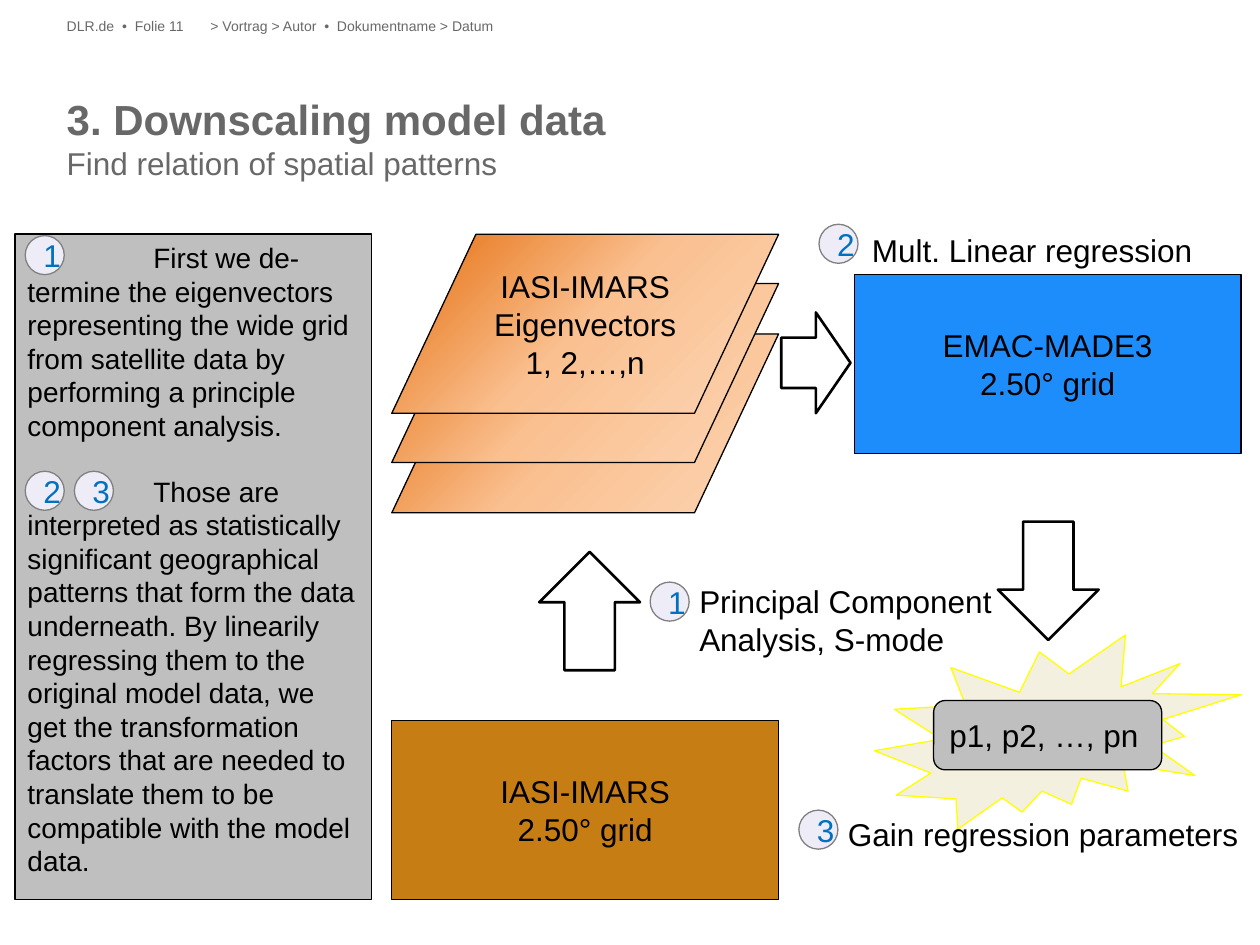
import pptx
import pptx.util
import pptx.dml.color
import pptx.enum.shapes
import pptx.enum.text
from pptx.oxml import parse_xml
from pptx.oxml.ns import nsdecls

Inches, Pt = pptx.util.Inches, pptx.util.Pt
RGBColor = pptx.dml.color.RGBColor
SHAPE = pptx.enum.shapes.MSO_SHAPE
ALIGN = pptx.enum.text.PP_ALIGN
ANCHOR = pptx.enum.text.MSO_ANCHOR

BLACK = RGBColor(0x00, 0x00, 0x00)
TITLE_GREY = RGBColor(0x68, 0x68, 0x68)
PANEL_GREY = RGBColor(0xBF, 0xBF, 0xBF)
BADGE_FILL = RGBColor(0xEE, 0xED, 0xF7)
BADGE_LINE = RGBColor(0x80, 0x80, 0x80)
BADGE_TEXT = RGBColor(0x00, 0x70, 0xC0)
OCHRE = RGBColor(0xC6, 0x7E, 0x14)
BLUE = RGBColor(0x1E, 0x8D, 0xFC)
CREAM = RGBColor(0xF4, 0xF0, 0xE0)
YELLOW = RGBColor(0xFF, 0xFF, 0x00)
ORANGE_STOPS = ((0, RGBColor(0xE4, 0x6C, 0x0A)), (50, RGBColor(0xFA, 0xC0, 0x90)),
                (100, RGBColor(0xFC, 0xD5, 0xB5)))

BOX_W, BOX_H = 3.07, 1.42
BOX_LEFT, BOX_RIGHT = 3.11, 6.78
BADGE = 0.31


class SlideBuilder:
    font = "Arial"
    size = 18

    def __init__(self, slide):
        self.s = slide

    def run(self, p, text, size=None, color=BLACK, bold=False):
        r = p.add_run()
        r.text = text
        r.font.name = self.font
        r.font.size = Pt(size or self.size)
        r.font.color.rgb = color
        r.font.bold = bold

    def text(self, x, y, w, h, *lines):
        """Add a box without insets; each line is (text, size, color, bold)."""
        tf = self.s.shapes.add_textbox(Inches(x), Inches(y), Inches(w), Inches(h)).text_frame
        tf.word_wrap = True
        tf.margin_left = tf.margin_right = tf.margin_top = tf.margin_bottom = 0
        p = tf.paragraphs[0]
        for i, line in enumerate(lines):
            if i:
                p.add_line_break()
            self.run(p, *line)

    def shape(self, kind, x, y, w, h, fill=None, line=BLACK, weight=0.75):
        sp = self.s.shapes.add_shape(kind, Inches(x), Inches(y), Inches(w), Inches(h))
        sp.shadow.inherit = False
        if fill is None:
            sp.fill.background()
        else:
            sp.fill.solid()
            sp.fill.fore_color.rgb = fill
        sp.line.color.rgb = line
        sp.line.width = Pt(weight)
        return sp

    def label(self, sp, *paragraphs, align=ALIGN.CENTER, anchor=ANCHOR.MIDDLE,
              size=None, color=BLACK, gap=0):
        tf = sp.text_frame
        tf.word_wrap = True
        tf.vertical_anchor = anchor
        for i, text in enumerate(paragraphs):
            p = tf.add_paragraph() if i else tf.paragraphs[0]
            p.alignment = align
            if i and gap:
                p.space_before = Pt(gap)
            self.run(p, text, size, color)

    def badge(self, number, x, y):
        sp = self.shape(SHAPE.OVAL, x, y, BADGE, BADGE, BADGE_FILL, BADGE_LINE)
        self.label(sp, str(number), color=BADGE_TEXT)

    def grid_box(self, x, y, fill, name):
        self.label(self.shape(SHAPE.RECTANGLE, x, y, BOX_W, BOX_H, fill), name, "2.50° grid")

    def sheet(self, x, y):
        """Add a parallelogram shaded outwards from its top left corner."""
        sp = self.shape(SHAPE.PARALLELOGRAM, x, y, BOX_W, BOX_H, PANEL_GREY)
        sp.adjustments[0] = 0.47
        stops = "".join(f'<a:gs pos="{pos * 1000}"><a:srgbClr val="{color}"/></a:gs>'
                        for pos, color in ORANGE_STOPS)
        grad = parse_xml(
            f'<a:gradFill {nsdecls("a")} rotWithShape="1"><a:gsLst>{stops}</a:gsLst>'
            '<a:path path="circle"><a:fillToRect r="100000" b="100000"/></a:path></a:gradFill>')
        solid = sp.fill._xPr.find(pptx.oxml.ns.qn("a:solidFill"))
        solid.getparent().replace(solid, grad)
        return sp

    def arrow(self, kind, x, y, w, h):
        self.shape(kind, x, y, w, h, weight=1.5)

    def panel(self, x, y, w, h, *paragraphs):
        """Add the explanation; each paragraph starts at a tab, clear of its badges."""
        sp = self.shape(SHAPE.RECTANGLE, x, y, w, h, PANEL_GREY, weight=1)
        self.label(sp, *("\t" + text for text in paragraphs), align=ALIGN.LEFT,
                   anchor=ANCHOR.TOP, size=16, gap=18.4)
        for p in sp.text_frame.paragraphs:
            p._p.get_or_add_pPr().append(parse_xml(
                f'<a:tabLst {nsdecls("a")}><a:tab pos="{Inches(1)}" algn="l"/></a:tabLst>'))


def main():
    prs = pptx.Presentation()
    prs.slide_width, prs.slide_height = Inches(10), Inches(7.5)
    b = SlideBuilder(prs.slides.add_slide(prs.slide_layouts[6]))

    b.shape(SHAPE.EXPLOSION2, 6.94, 5.04, 2.91, 1.54, CREAM, YELLOW)

    b.text(1.67, 0.14, 7.8, 0.16,
           ("> Vortrag > Autor  •  Dokumentname > Datum", 8, TITLE_GREY))
    b.text(0.53, 0.14, 1.14, 0.16, ("DLR.de  •  Folie 11", 8, TITLE_GREY))
    b.text(0.53, 0.74, 8.94, 0.81, ("3. Downscaling model data", 24, TITLE_GREY, True),
           ("Find relation of spatial patterns", 18, TITLE_GREY))

    for y in (2.65, 2.25, 1.86):
        top_sheet = b.sheet(BOX_LEFT, y)
    b.label(top_sheet, "IASI-IMARS Eigenvectors", "1, 2,…,n")

    b.grid_box(BOX_LEFT, 5.72, OCHRE, "IASI-IMARS")
    b.grid_box(BOX_RIGHT, 2.18, BLUE, "EMAC-MADE3")

    b.arrow(SHAPE.UP_ARROW, 4.28, 4.38, 0.8, 0.94)
    b.arrow(SHAPE.RIGHT_ARROW, 6.2, 2.48, 0.55, 0.8)
    b.arrow(SHAPE.DOWN_ARROW, 7.92, 4.14, 0.8, 0.94)

    b.text(5.55, 4.62, 2.44, 0.61, ("Principal Component Analysis, S-mode",))
    b.text(6.92, 1.83, 2.69, 0.3, ("Mult. Linear regression",))
    b.text(6.73, 6.47, 3.54, 0.3, ("Gain regression parameters",))

    parameters = b.shape(SHAPE.ROUNDED_RECTANGLE, 7.41, 5.56, 1.81, 0.55, PANEL_GREY)
    b.label(parameters, "p1, p2, …, pn", align=ALIGN.LEFT)

    b.panel(0.12, 1.86, 2.83, 5.28,
            "First we de-termine the eigenvectors representing the wide grid from "
            "satellite data by performing a principle component analysis.",
            "Those are interpreted as statistically significant geographical patterns "
            "that form the data underneath. By linearily regressing them to the original "
            "model data, we get the transformation factors that are needed to translate "
            "them to be compatible with the model data.")

    for number, x, y in ((1, 5.16, 4.62), (2, 6.5, 1.78), (3, 6.34, 6.43),
                         (1, 0.2, 1.87), (2, 0.2, 3.74), (3, 0.59, 3.74)):
        b.badge(number, x, y)

    prs.save("out.pptx")


if __name__ == "__main__":
    main()
